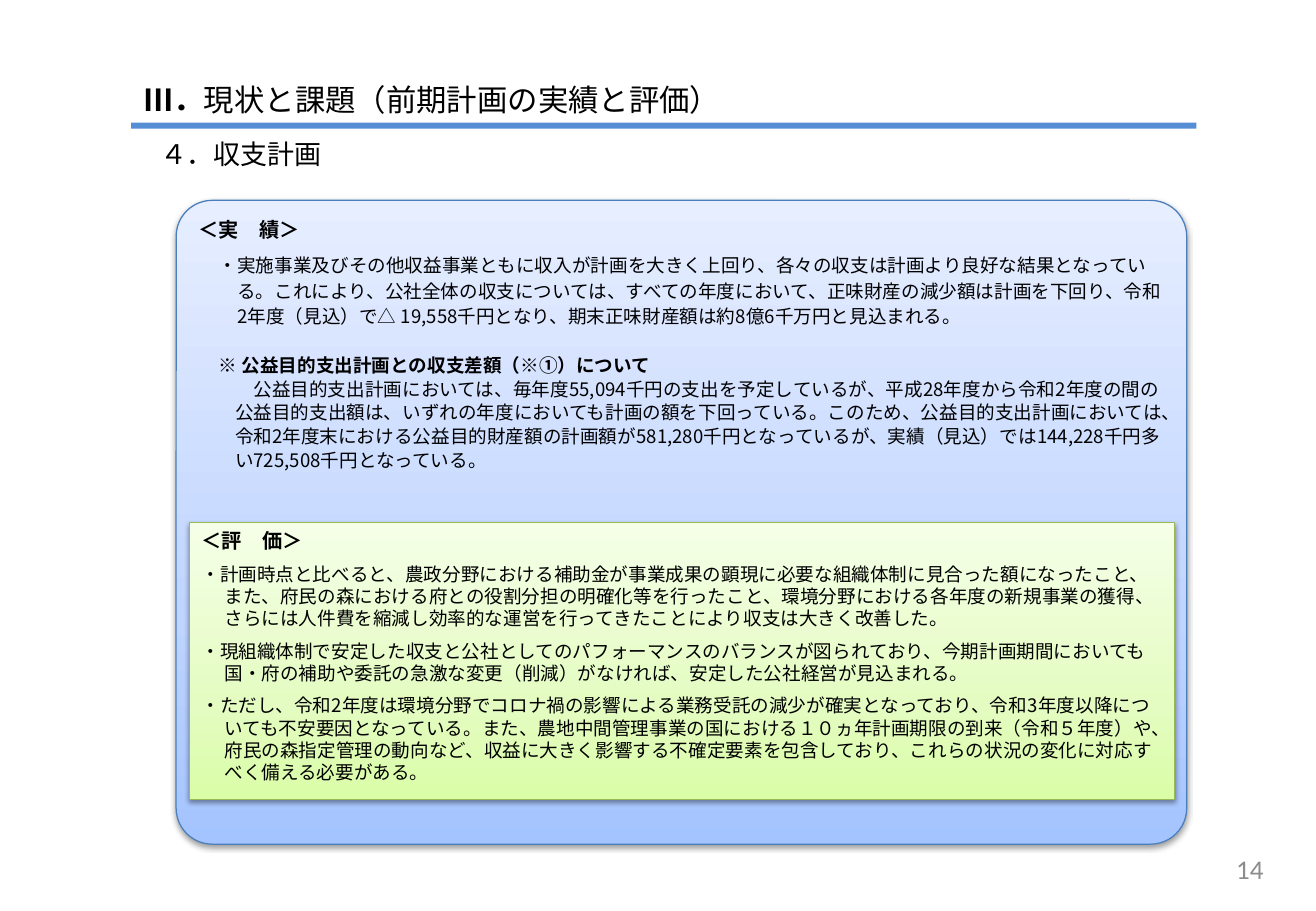
from dataclasses import dataclass
from typing import Any, Optional, Union

import lxml.etree
import pptx
import pptx.dml.color
import pptx.enum.lang
import pptx.enum.shapes
import pptx.enum.text
import pptx.oxml.ns
import pptx.util

Pt = pptx.util.Pt
Shapes = pptx.enum.shapes.MSO_SHAPE
Anchor = pptx.enum.text.MSO_ANCHOR
Align = pptx.enum.text.PP_ALIGN
qn = pptx.oxml.ns.qn
JAPANESE_FONT = "Noto Sans CJK JP"


@dataclass(frozen=True)
class Span:
    text: str
    size: float = 11
    bold: bool = False
    font: str = JAPANESE_FONT
    color: str = "000000"


@dataclass(frozen=True)
class Para:
    """Indents and spacing are in points; an integer or Pt line spacing is exact."""
    spans: tuple[Span, ...]
    left: float = 0
    first: float = 0
    before: float = 0
    line: Optional[Union[float, pptx.util.Length]] = None
    align: Any = Align.LEFT


@dataclass(frozen=True)
class Area:
    left: float
    top: float
    width: float
    height: float

    def lengths(self) -> tuple[pptx.util.Length, ...]:
        return Pt(self.left), Pt(self.top), Pt(self.width), Pt(self.height)


@dataclass(frozen=True)
class Panel:
    kind: Any
    area: Area
    stops: tuple[tuple[int, str], ...]
    outline: str
    paras: tuple[Para, ...]
    corner: Optional[float] = None


def rgb(value: str) -> pptx.dml.color.RGBColor:
    return pptx.dml.color.RGBColor.from_string(value)


def add_child(parent: Any, tag: str, **attributes: Any) -> Any:
    return lxml.etree.SubElement(
        parent, qn(tag), {name: str(value) for name, value in attributes.items()})


def write_text(shape: Any, paras: tuple[Para, ...], anchor: Any = Anchor.TOP) -> None:
    frame = shape.text_frame
    frame.word_wrap = True
    frame.vertical_anchor = anchor
    for index, para in enumerate(paras):
        paragraph = frame.add_paragraph() if index else frame.paragraphs[0]
        paragraph.alignment = para.align
        paragraph.space_before = Pt(para.before)
        paragraph.line_spacing = para.line
        properties = paragraph._p.get_or_add_pPr()
        properties.set("marL", str(Pt(para.left)))
        properties.set("indent", str(Pt(para.first)))
        for span in para.spans:
            run = paragraph.add_run()
            run.text = span.text
            run.font.size = Pt(span.size)
            run.font.bold = span.bold
            run.font.color.rgb = rgb(span.color)
            run.font.name = span.font
            run.font.language_id = pptx.enum.lang.MSO_LANGUAGE_ID.JAPANESE
            add_child(run._r.get_or_add_rPr(), "a:ea", typeface=span.font)


def add_text(page: Any, area: Area, para: Para, anchor: Any = Anchor.TOP) -> None:
    write_text(page.shapes.add_textbox(*area.lengths()), (para,), anchor)


def add_rule(page: Any, area: Area, color: str) -> None:
    rule = page.shapes.add_shape(Shapes.RECTANGLE, *area.lengths())
    rule.shadow.inherit = False
    rule.fill.solid()
    rule.fill.fore_color.rgb = rgb(color)
    rule.line.fill.background()


def set_gradient(shape: Any, stops: tuple[tuple[int, str], ...]) -> None:
    """Run the stops from the bottom edge to the top edge."""
    shape.fill.gradient()
    shape.fill.gradient_angle = 90
    stop_list = shape._element.spPr.find(".//" + qn("a:gsLst"))
    for stop in list(stop_list):
        stop_list.remove(stop)
    for percent, color in stops:
        add_child(add_child(stop_list, "a:gs", pos=percent * 1000), "a:srgbClr", val=color)


def set_shadow(shape: Any) -> None:
    shape.shadow.inherit = False
    effects = shape._element.spPr.find(qn("a:effectLst"))
    shadow = add_child(effects, "a:outerShdw", blurRad=Pt(3.1), dist=Pt(1.6),
                       dir=90 * 60000, rotWithShape=0)
    add_child(add_child(shadow, "a:srgbClr", val="000000"), "a:alpha", val=38000)


def add_panel(page: Any, panel: Panel) -> None:
    shape = page.shapes.add_shape(panel.kind, *panel.area.lengths())
    if panel.corner is not None:
        shape.adjustments[0] = panel.corner
    set_gradient(shape, panel.stops)
    shape.line.color.rgb = rgb(panel.outline)
    shape.line.width = Pt(0.75)
    set_shadow(shape)
    write_text(shape, panel.paras)


def heading(text: str) -> Para:
    return Para((Span(text, 12, True),), before=2.4)


def evaluation(text: str) -> Para:
    return Para((Span(text),), left=13.7, first=-13.7, before=6)


RESULTS = Panel(
    Shapes.ROUNDED_RECTANGLE, Area(104.4, 118.8, 599, 381.6),
    ((0, "A4C4FF"), (35, "BFD4FF"), (100, "E6EEFF")), "4B7EBC",
    (
        heading("＜実　績＞"),
        Para((Span("・実施事業及びその他収益事業ともに収入が計画を大きく上回り、各々の収支は計画より良好な結果となっている。これにより、公社全体の収支については、すべての年度において、正味財産の減少額は計画を下回り、令和2年度（見込）で△ 19,558千円となり、期末正味財産額は約8億6千万円と見込まれる。"),),
             left=23, first=-11, before=6, line=Pt(15)),
        Para((Span("※ 公益目的支出計画との収支差額（※①）について", bold=True),),
             left=12, before=12, line=1.3),
        Para((Span("公益目的支出計画においては、毎年度55,094千円の支出を予定しているが、平成28年度から令和2年度の間の公益目的支出額は、いずれの年度においても計画の額を下回っている。このため、公益目的支出計画においては、令和2年度末における公益目的財産額の計画額が581,280千円となっているが、実績（見込）では144,228千円多い725,508千円となっている。"),),
             left=21.6, first=11, line=Pt(14)),
    ),
    corner=0.056)

EVALUATION = Panel(
    Shapes.RECTANGLE, Area(112.3, 309.6, 583.9, 164.2),
    ((0, "DAFDA7"), (35, "E4FCC2"), (100, "F5FFE7")), "98B955",
    (
        heading("＜評　価＞"),
        evaluation("・計画時点と比べると、農政分野における補助金が事業成果の顕現に必要な組織体制に見合った額になったこと、また、府民の森における府との役割分担の明確化等を行ったこと、環境分野における各年度の新規事業の獲得、さらには人件費を縮減し効率的な運営を行ってきたことにより収支は大きく改善した。"),
        evaluation("・現組織体制で安定した収支と公社としてのパフォーマンスのバランスが図られており、今期計画期間においても国・府の補助や委託の急激な変更（削減）がなければ、安定した公社経営が見込まれる。"),
        evaluation("・ただし、令和2年度は環境分野でコロナ禍の影響による業務受託の減少が確実となっており、令和3年度以降についても不安要因となっている。また、農地中間管理事業の国における１０ヵ年計画期限の到来（令和５年度）や、府民の森指定管理の動向など、収益に大きく影響する不確定要素を包含しており、これらの状況の変化に対応すべく備える必要がある。"),
    ))


def main() -> None:
    deck = pptx.Presentation()
    deck.slide_width, deck.slide_height = Pt(780), Pt(540)
    page = deck.slides.add_slide(deck.slide_layouts[6])
    add_text(page, Area(77.8, 39.6, 380.2, 38.9),
             Para((Span("Ⅲ．", 18, True), Span("現状と課題（前期計画の実績と評価）", 18))),
             Anchor.MIDDLE)
    add_rule(page, Area(77.8, 72.7, 631.4, 3.6), "558ED5")
    add_text(page, Area(87.8, 77.8, 295.9, 26.6), Para((Span("４．収支計画", 16),)))
    add_panel(page, RESULTS)
    add_text(page, Area(573.8, 500.4, 182.2, 28.8),
             Para((Span("14", 16, font="Calibri", color="8C8C8C"),), align=Align.RIGHT),
             Anchor.MIDDLE)
    add_panel(page, EVALUATION)
    deck.save("out.pptx")


if __name__ == "__main__":
    main()
